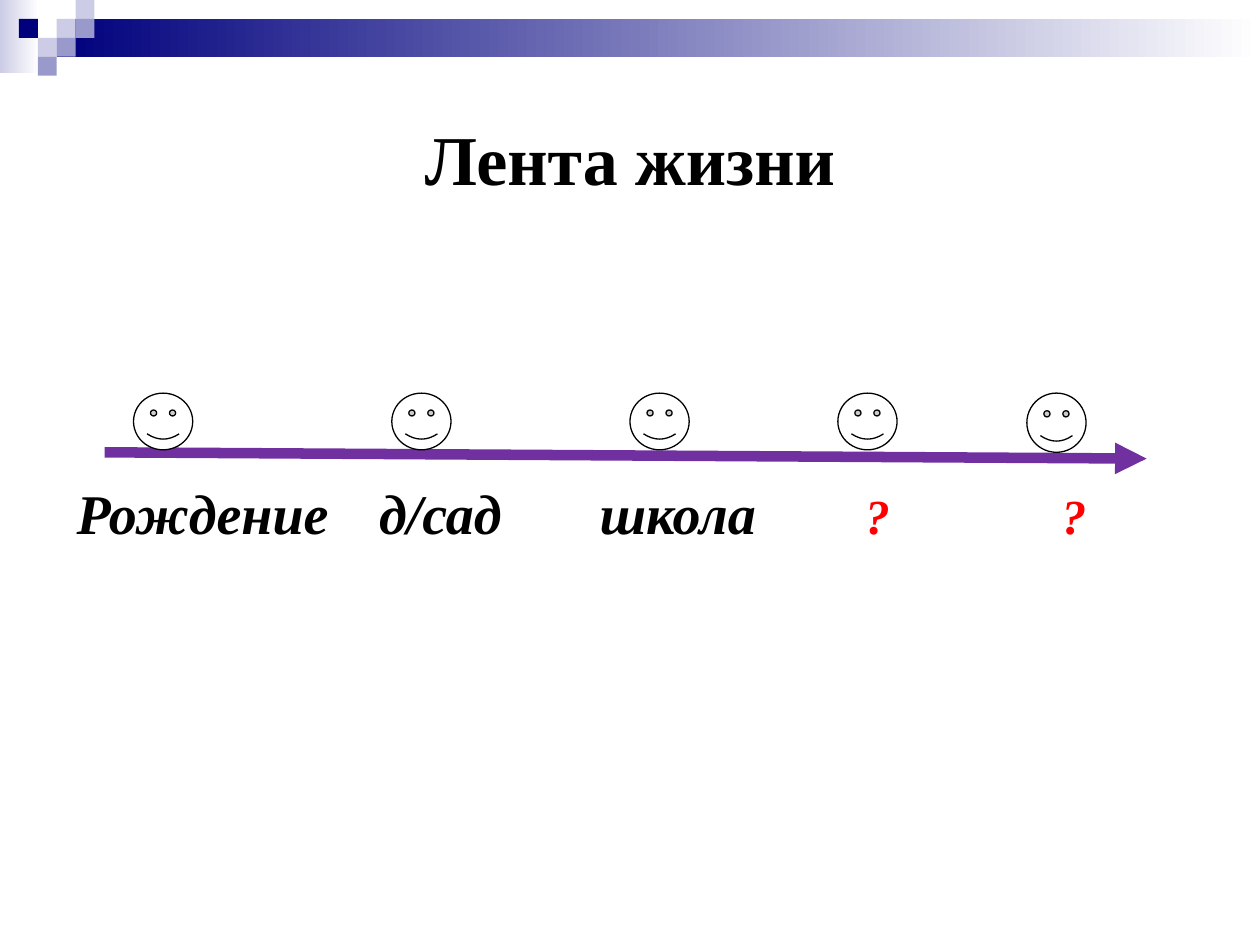
from lxml.etree import SubElement
from pptx import Presentation
from pptx.dml.color import RGBColor
from pptx.enum.shapes import MSO_CONNECTOR, MSO_SHAPE
from pptx.enum.text import MSO_ANCHOR, PP_ALIGN
from pptx.oxml.ns import qn
from pptx.util import Inches, Pt

BLACK = RGBColor(0x00, 0x00, 0x00)
WHITE = RGBColor(0xFF, 0xFF, 0xFF)
RED = RGBColor(0xFF, 0x00, 0x00)
PURPLE = RGBColor(0x70, 0x30, 0xA0)
NAVY = RGBColor(0x00, 0x00, 0x7D)
LILAC = RGBColor(0x99, 0x99, 0xCC)
PALE = RGBColor(0xCC, 0xCC, 0xE6)
FONT = "Times New Roman"

TITLE = "Лента жизни"
BIRTH = "Рождение"
# text, size, colour, tab stop from the left edge of the text
STAGES = [
    ("д/сад", 32, BLACK, 0.19),
    ("школа", 32, BLACK, 1.94),
    ("?", 28, RED, 4.05),
    ("?", 28, RED, 5.61),
]
# left, height
FACES = [(1.06, 0.45), (3.11, 0.45), (5, 0.45), (6.65, 0.45), (8.15, 0.47)]
FACE_TOP, FACE_WIDTH = 3.12, 0.47
ARROW_START, ARROW_END = (0.83, 3.59), (9.1, 3.64)

# left, top, width, height, first colour of the fade to white
BANDS = [(0, 0, 0.31, 0.58, PALE), (0.45, 0.15, 9.55, 0.3, NAVY)]
CELL = 0.15
# column, row, colour
SQUARES = [
    (3, 1, PALE), (4, 0, PALE), (4, 1, LILAC), (2, 2, PALE),
    (1, 1, NAVY), (3, 2, LILAC), (2, 3, LILAC),
]


def add_plain_shape(slide, kind, left, top, width, height):
    """Add a preset shape without shadow or outline."""
    shape = slide.shapes.add_shape(
        kind, Inches(left), Inches(top), Inches(width), Inches(height))
    shape.shadow.inherit = False
    shape.line.fill.background()
    return shape


def fill_solid(shape, colour):
    shape.fill.solid()
    shape.fill.fore_color.rgb = colour


def add_text_box(slide, left, top, width, height):
    """Add a wrapping text box and return its frame."""
    frame = slide.shapes.add_textbox(
        Inches(left), Inches(top), Inches(width), Inches(height)).text_frame
    frame.word_wrap = True
    return frame


def add_run(paragraph, text, size, colour=BLACK, italic=True):
    run = paragraph.add_run()
    run.text = text
    font = run.font
    font.name, font.size = FONT, Pt(size)
    font.bold, font.italic = True, italic
    font.color.rgb = colour


def add_decoration(slide):
    for left, top, width, height, colour in BANDS:
        band = add_plain_shape(slide, MSO_SHAPE.RECTANGLE, left, top, width, height)
        band.fill.gradient()
        band.fill.gradient_angle = 0
        for stop, stop_colour, position in zip(
                band.fill.gradient_stops, (colour, WHITE), (0, 1)):
            stop.color.rgb = stop_colour
            stop.position = position
    for column, row, colour in SQUARES:
        square = add_plain_shape(
            slide, MSO_SHAPE.RECTANGLE, column * CELL, row * CELL, CELL, CELL)
        fill_solid(square, colour)


def add_title(slide):
    frame = add_text_box(slide, 0.5, 0.5, 9, 1.5)
    frame.vertical_anchor = MSO_ANCHOR.MIDDLE
    paragraph = frame.paragraphs[0]
    paragraph.alignment = PP_ALIGN.CENTER
    add_run(paragraph, TITLE, 40, italic=False)


def add_timeline(slide):
    arrow = slide.shapes.add_connector(
        MSO_CONNECTOR.STRAIGHT, *map(Inches, ARROW_START + ARROW_END))
    arrow.line.color.rgb = PURPLE
    arrow.line.width = Pt(6)
    SubElement(arrow.line._get_or_add_ln(), qn("a:tailEnd"), type="triangle")
    SubElement(arrow._element.spPr, qn("a:effectLst"))

    for left, height in FACES:
        face = add_plain_shape(
            slide, MSO_SHAPE.SMILEY_FACE, left, FACE_TOP, FACE_WIDTH, height)
        fill_solid(face, WHITE)
        face.line.color.rgb = BLACK
        face.line.width = Pt(0.75)


def add_labels(slide):
    birth = add_text_box(slide, 0.51, 3.75, 2.22, 0.64)
    add_run(birth.paragraphs[0], BIRTH, 32)

    paragraph = add_text_box(slide, 2.72, 3.75, 6.22, 0.64).paragraphs[0]
    tabs = SubElement(paragraph._p.get_or_add_pPr(), qn("a:tabLst"))
    for text, size, colour, stop in STAGES:
        SubElement(tabs, qn("a:tab"), pos=str(Inches(stop)), algn="l")
        add_run(paragraph, "\t" + text, size, colour)


def main():
    presentation = Presentation()
    presentation.slide_width, presentation.slide_height = Inches(10), Inches(7.5)
    slide = presentation.slides.add_slide(presentation.slide_layouts[6])
    add_decoration(slide)
    add_title(slide)
    add_timeline(slide)
    add_labels(slide)
    presentation.save("out.pptx")


if __name__ == "__main__":
    main()
